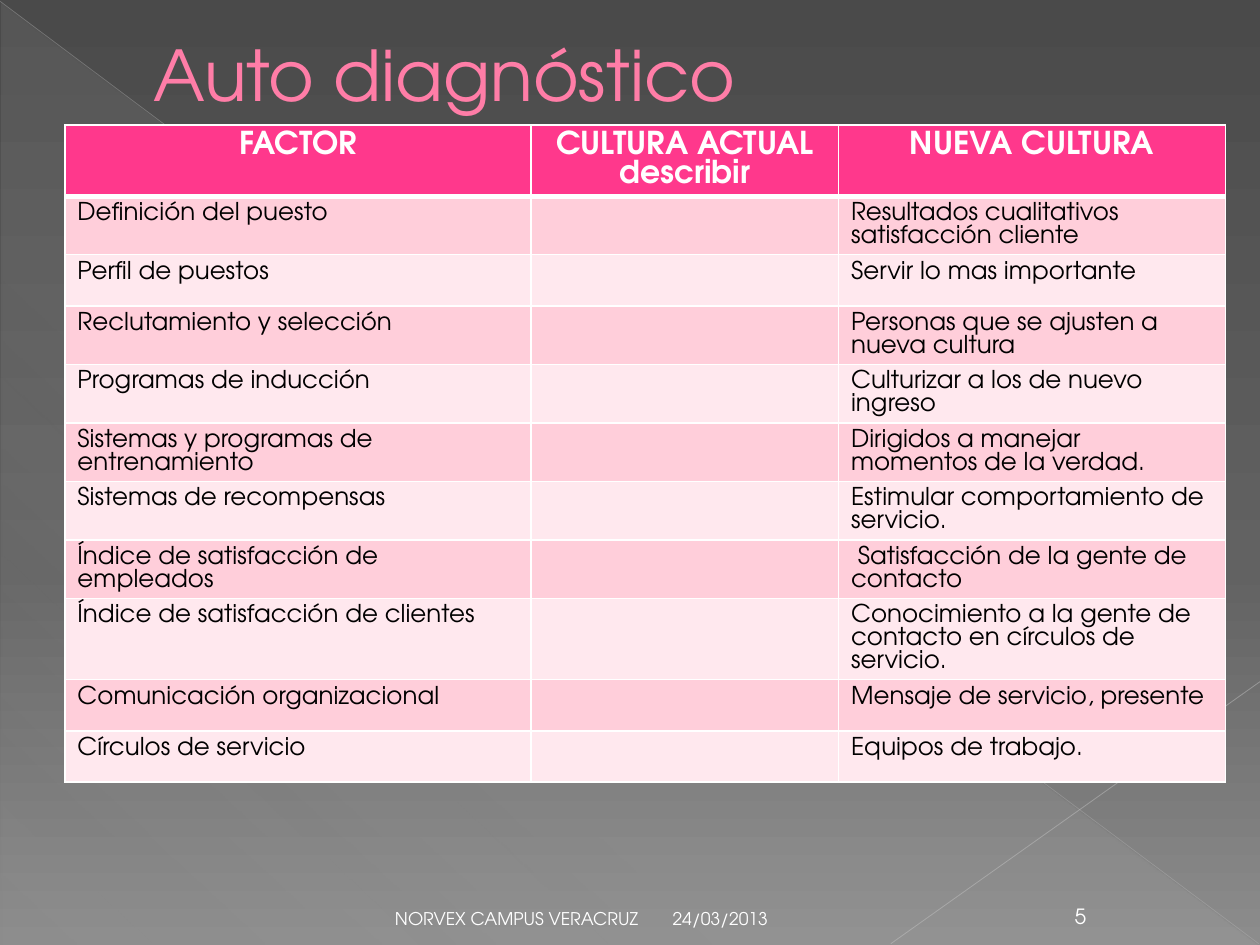
from pptx import Presentation
from pptx.dml.color import RGBColor
from pptx.enum.shapes import MSO_CONNECTOR, MSO_SHAPE
from pptx.enum.text import MSO_ANCHOR, PP_ALIGN
from pptx.oxml.ns import qn
from pptx.util import Inches, Pt
from lxml.etree import SubElement

THEME = {
    "font": "TeX Gyre Adventor",
    "title": "FF7DA7", "header": "FF388C", "bands": ("FFCEDA", "FFE8EE"),
    "light": "FFFFFF", "dark": "000000",
    "back": [(0, "4A4A4A", 100), (60, "626262", 100), (100, "8C8C8C", 100)],
    "wedge": [(0, "D2D2D2", 10), (70, "D2D2D2", 8), (100, "D2D2D2", 1)],
    "title_size": 40, "header_size": 18, "body_size": 14, "foot_size": 10, "page_size": 12,
    "header_leading": 16.8, "body_leading": 13.1,
}


def write(tf, text, size, color, bold=False, align=PP_ALIGN.LEFT, anchor=MSO_ANCHOR.TOP, leading=None):
    tf.word_wrap = True
    tf.vertical_anchor = anchor
    for i, line in enumerate(text.split("\n")):
        p = tf.add_paragraph() if i else tf.paragraphs[0]
        p.alignment = align
        if leading:
            p.line_spacing = Pt(leading)
        r = p.add_run()
        r.text = line
        r.font.name = THEME["font"]
        r.font.size = Pt(size)
        r.font.bold = bold
        r.font.color.rgb = RGBColor.from_string(color)


def shade(fill, element, stops, angle):
    fill.gradient()
    fill.gradient_angle = 360 - angle
    gs_list = next(element.iter(qn("a:gsLst")))
    for gs in list(gs_list):
        gs_list.remove(gs)
    for pos, color, alpha in stops:
        gs = SubElement(gs_list, qn("a:gs"), pos=str(pos * 1000))
        clr = SubElement(gs, qn("a:srgbClr"), val=color)
        SubElement(clr, qn("a:alpha"), val=str(alpha * 1000))


prs = Presentation()
prs.slide_width, prs.slide_height = Inches(10), Inches(7.5)
W, H = prs.slide_width, prs.slide_height
COL, ROW = W / 100, H / 75
s = prs.slides.add_slide(prs.slide_layouts[6])
shade(s.background.fill, s.element, THEME["back"], 90)

sp = s.shapes.add_shape(MSO_SHAPE.RIGHT_TRIANGLE, int(0.1 * COL), int(0.2 * ROW), int(99.8 * COL), int(74.8 * ROW))
sp.shadow.inherit = False
sp.line.fill.background()
shade(sp.fill, sp.element, THEME["wedge"], 133)

for x1, y1, x2, y2, color, width, alpha in [
    (0, 0.1, 99.9, 74.9, "BFBFBF", 0.39, 35),
    (100, 54.1, 70.7, 74.9, "C6C6C6", 0.47, 45),
]:
    cx = s.shapes.add_connector(MSO_CONNECTOR.STRAIGHT, int(x1 * COL), int(y1 * ROW), int(x2 * COL), int(y2 * ROW))
    cx.line.width = Pt(width)
    cx.line.color.rgb = RGBColor.from_string(color)
    SubElement(next(cx.element.iter(qn("a:srgbClr"))), qn("a:alpha"), val=str(alpha * 1000))
    SubElement(cx.element.spPr, qn("a:effectLst"))

tb = s.shapes.add_textbox(int(5.9 * COL), 0, int(90 * COL), int(11.7 * ROW))
write(tb.text_frame, "Auto diagnóstico", THEME["title_size"], THEME["title"], anchor=MSO_ANCHOR.MIDDLE)
tb.text_frame.paragraphs[0]._p.get_or_add_pPr().set("marL", str(int(5.3 * COL)))

rows = [
    ("FACTOR", "CULTURA ACTUAL\ndescribir", "NUEVA CULTURA"),
    ("Definición del puesto", "", "Resultados cualitativos satisfacción cliente"),
    ("Perfil de puestos", "", "Servir lo mas importante"),
    ("Reclutamiento y selección", "", "Personas que se ajusten a nueva cultura"),
    ("Programas de inducción", "", "Culturizar a los de nuevo ingreso"),
    ("Sistemas y programas de entrenamiento", "", "Dirigidos a manejar momentos de la verdad."),
    ("Sistemas de recompensas", "", "Estimular comportamiento de servicio."),
    ("Índice de satisfacción de empleados", "", " Satisfacción de la gente de contacto"),
    ("Índice de satisfacción de clientes", "", "Conocimiento a la gente de contacto en círculos de servicio."),
    ("Comunicación organizacional", "", "Mensaje de servicio, presente"),
    ("Círculos de servicio", "", "Equipos de trabajo."),
]
widths = (37, 24.4, 30.7)
row_height = 4.06 * ROW
table = s.shapes.add_table(len(rows), len(widths), int(5.15 * COL), int(9.9 * ROW),
                           int(sum(widths) * COL), int(len(rows) * row_height)).table
for column, width in zip(table.columns, widths):
    column.width = int(width * COL)

for i, texts in enumerate(rows):
    table.rows[i].height = int(row_height)
    for j, text in enumerate(texts):
        cell = table.cell(i, j)
        cell.fill.solid()
        cell.fill.fore_color.rgb = RGBColor.from_string(THEME["bands"][(i - 1) % 2] if i else THEME["header"])
        if i == 0:
            write(cell.text_frame, text, THEME["header_size"], THEME["light"], bold=True,
                  align=PP_ALIGN.CENTER, leading=THEME["header_leading"])
        elif text:
            write(cell.text_frame, text, THEME["body_size"], THEME["dark"], leading=THEME["body_leading"])
        tcPr = cell._tc.get_or_add_tcPr()
        for k, side in enumerate(("lnL", "lnR", "lnT", "lnB")):
            thick = (i, side) in ((0, "lnB"), (1, "lnT"))
            ln = SubElement(tcPr, qn(f"a:{side}"), w=str(Pt(3 if thick else 1)))
            SubElement(SubElement(ln, qn("a:solidFill")), qn("a:srgbClr"), val=THEME["light"])
            tcPr.insert(k, ln)

for text, x, width, size, align in [
    ("24/03/2013", 52.4, 23.3, THEME["foot_size"], PP_ALIGN.LEFT),
    ("NORVEX CAMPUS VERACRUZ", 5, 46.6, THEME["foot_size"], PP_ALIGN.RIGHT),
    ("5", 83, 5.5, THEME["page_size"], PP_ALIGN.CENTER),
]:
    tb = s.shapes.add_textbox(int(x * COL), int(70.9 * ROW), int(width * COL), int(3.3 * ROW))
    write(tb.text_frame, text, size, THEME["light"], align=align, anchor=MSO_ANCHOR.BOTTOM)

prs.save("out.pptx")
